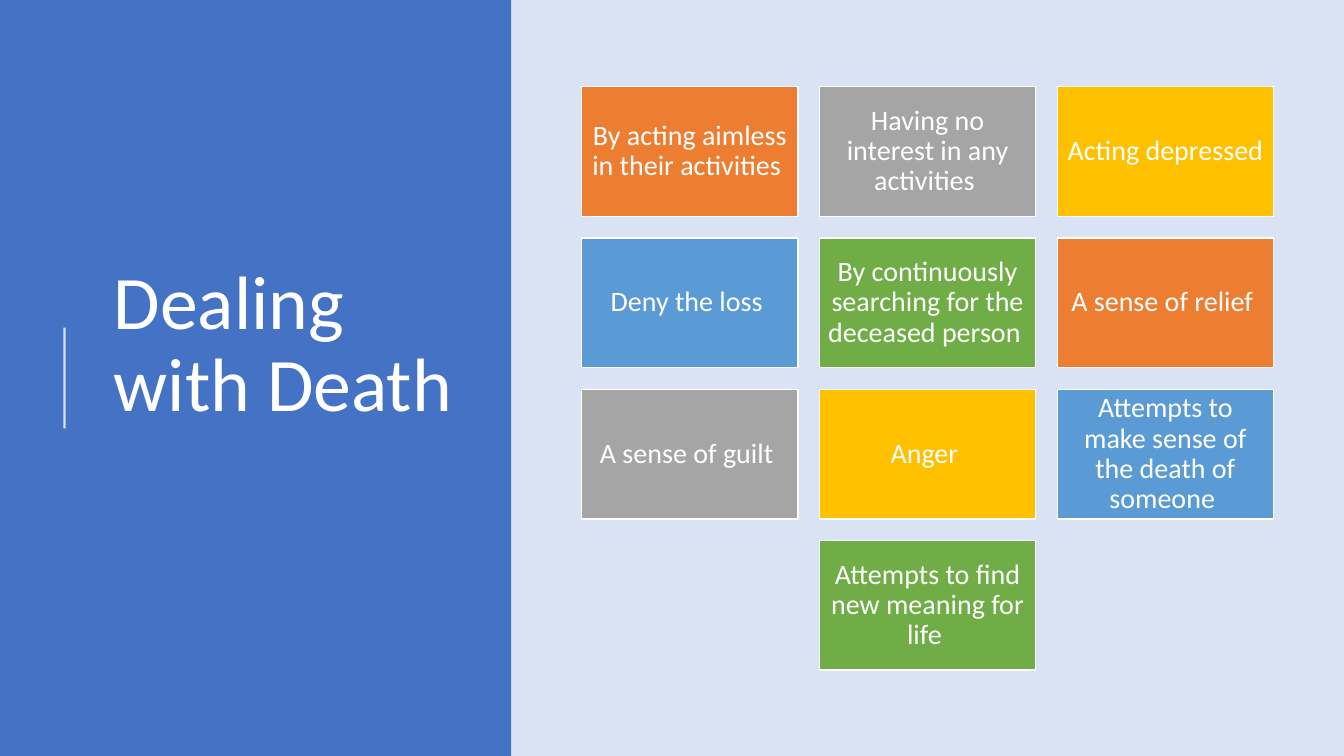
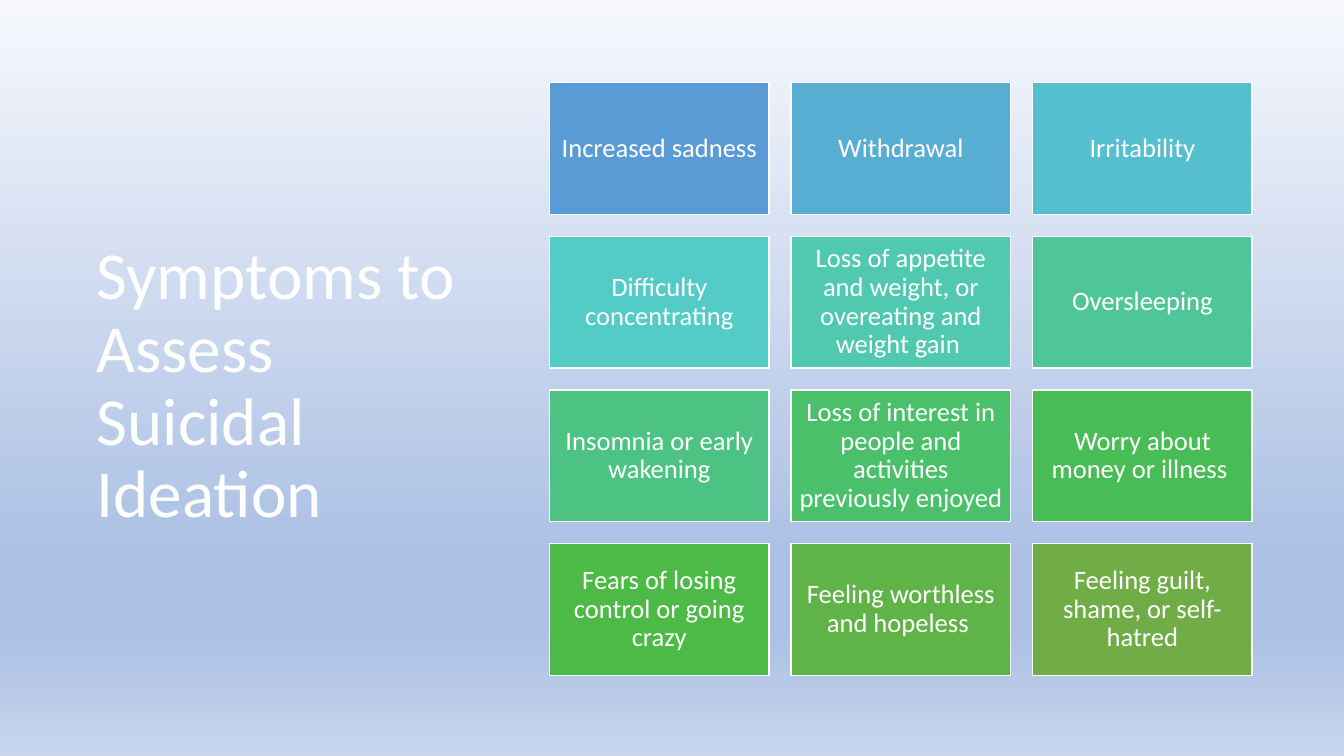
import pptx
import pptx.dml.color
import pptx.enum.shapes
import pptx.enum.text
import pptx.oxml
import pptx.oxml.ns
import pptx.util
from lxml import etree

Inches = pptx.util.Inches
Pt = pptx.util.Pt
qn = pptx.oxml.ns.qn

FONT = "Calibri"
WHITE = "FFFFFF"
BAND_BLUE = "4472C4"
PALE_BLUE = "DAE3F3"
SKY_STOPS = [(0, "F6F8FC"), (74, "ABC0E4"), (83, "ABC0E4"), (100, "C7D5ED")]

COLUMNS = 3
GAP_RATIO = 0.1      # gap between tiles, as a share of tile width
HEIGHT_RATIO = 0.6   # tile height, as a share of tile width

ACCENTS = ["ED7D31", "A5A5A5", "FFC000", "5B9BD5", "70AD47"]
REACTIONS = [
    "By acting aimless in their activities ",
    "Having no interest in any activities ",
    "Acting depressed ",
    "Deny the loss ",
    "By continuously searching for the deceased person ",
    "A sense of relief ",
    "A sense of guilt ",
    "Anger ",
    "Attempts to make sense of the death of someone ",
    "Attempts to find new meaning for life ",
]
SYMPTOMS = [
    ("Increased sadness", "5B9BD5"),
    ("Withdrawal", "58ADD2"),
    ("Irritability", "56BFCF"),
    ("Difficulty concentrating", "53CCC8"),
    ("Loss of appetite and weight, or overeating and weight gain ", "51C9B0"),
    ("Oversleeping", "4FC699"),
    ("Insomnia or early wakening", "4CC382"),
    ("Loss of interest in people and activities previously enjoyed ", "4AC06B"),
    ("Worry about money or illness ", "48BC55"),
    ("Fears of losing control or going crazy", "4DB946"),
    ("Feeling worthless and hopeless ", "60B347"),
    ("Feeling guilt, shame, or self-hatred", "70AD47"),
]


def rgb(value):
    return pptx.dml.color.RGBColor.from_string(value)


def write(shape, text, size, align):
    """Put one white, vertically centred paragraph in a shape."""
    frame = shape.text_frame
    frame.word_wrap = True
    frame.vertical_anchor = pptx.enum.text.MSO_ANCHOR.MIDDLE
    paragraph = frame.paragraphs[0]
    paragraph.text = text
    paragraph.alignment = align
    paragraph.line_spacing = 0.9
    paragraph.font.name = FONT
    paragraph.font.size = Pt(size)
    paragraph.font.color.rgb = rgb(WHITE)


def add_title(slide, text, size, left, top, width, height):
    title = slide.shapes.add_textbox(
        Inches(left), Inches(top), Inches(width), Inches(height))
    write(title, text, size, pptx.enum.text.PP_ALIGN.LEFT)


def add_rectangle(slide, left, top, width, height, fill, outline=None):
    rectangle = slide.shapes.add_shape(
        pptx.enum.shapes.MSO_SHAPE.RECTANGLE,
        Inches(left), Inches(top), Inches(width), Inches(height))
    rectangle.shadow.inherit = False
    rectangle.fill.solid()
    rectangle.fill.fore_color.rgb = rgb(fill)
    if outline:
        rectangle.line.color.rgb = rgb(outline)
        rectangle.line.width = Pt(1)
    else:
        rectangle.line.fill.background()
    return rectangle


def add_tile_grid(slide, tiles, left, top, total_width, size):
    """Lay (text, colour) tiles out in rows; a short last row is centred."""
    width = total_width / (COLUMNS + (COLUMNS - 1) * GAP_RATIO)
    height = width * HEIGHT_RATIO
    gap = width * GAP_RATIO
    for index, (text, colour) in enumerate(tiles):
        row, column = divmod(index, COLUMNS)
        in_row = min(COLUMNS, len(tiles) - row * COLUMNS)
        column += (COLUMNS - in_row) / 2
        tile = add_rectangle(
            slide, left + column * (width + gap), top + row * (height + gap),
            width, height, colour, WHITE)
        frame = tile.text_frame
        frame.margin_left = frame.margin_right = Inches(0.08)
        frame.margin_top = frame.margin_bottom = Inches(0.08)
        write(tile, text, size, pptx.enum.text.PP_ALIGN.CENTER)


def add_accent_line(slide, x, top, bottom, opacity):
    accent = slide.shapes.add_connector(
        pptx.enum.shapes.MSO_CONNECTOR.STRAIGHT,
        Inches(x), Inches(bottom), Inches(x), Inches(top))
    accent.line.color.rgb = rgb(WHITE)
    accent.line.width = Pt(1.5)
    properties = accent._element.spPr
    colour = properties.find(".//" + qn("a:srgbClr"))
    etree.SubElement(colour, qn("a:alpha"), val=str(opacity * 1000))
    etree.SubElement(properties, qn("a:effectLst"))


def set_gradient_background(slide, stops):
    """Run the stops from the top of the slide to the bottom."""
    fill = slide.background.fill
    fill.gradient()
    fill.gradient_angle = 270
    stop_list = slide._element.find(".//" + qn("a:gsLst"))
    for old_stop in list(stop_list):
        stop_list.remove(old_stop)
    for position, colour in stops:
        stop = etree.SubElement(stop_list, qn("a:gs"), pos=str(position * 1000))
        etree.SubElement(stop, qn("a:srgbClr"), val=colour)


def build_dealing_with_death(slide):
    slide.background.fill.solid()
    slide.background.fill.fore_color.rgb = rgb(PALE_BLUE)
    add_rectangle(slide, 0, 0, 5.07, 7.5, BAND_BLUE)
    add_title(slide, "Dealing with Death", 54, 1.03, 0.78, 3.69, 5.3)
    add_accent_line(slide, 0.64, 3.25, 4.25, opacity=80)
    tiles = [(text, ACCENTS[index % len(ACCENTS)])
             for index, text in enumerate(REACTIONS)]
    add_tile_grid(slide, tiles, 5.77, 0.86, 6.86, 20)


def build_symptoms(slide):
    set_gradient_background(slide, SKY_STOPS)
    add_title(slide, "Symptoms to Assess Suicidal Ideation", 48,
              0.86, 0.92, 3.84, 5.84)
    add_tile_grid(slide, SYMPTOMS, 5.45, 0.82, 6.97, 19)


def main():
    deck = pptx.Presentation()
    deck.slide_width = Inches(13.33)
    deck.slide_height = Inches(7.5)
    blank = deck.slide_layouts[6]
    for build in (build_dealing_with_death, build_symptoms):
        build(deck.slides.add_slide(blank))
    deck.save("out.pptx")


if __name__ == "__main__":
    main()
